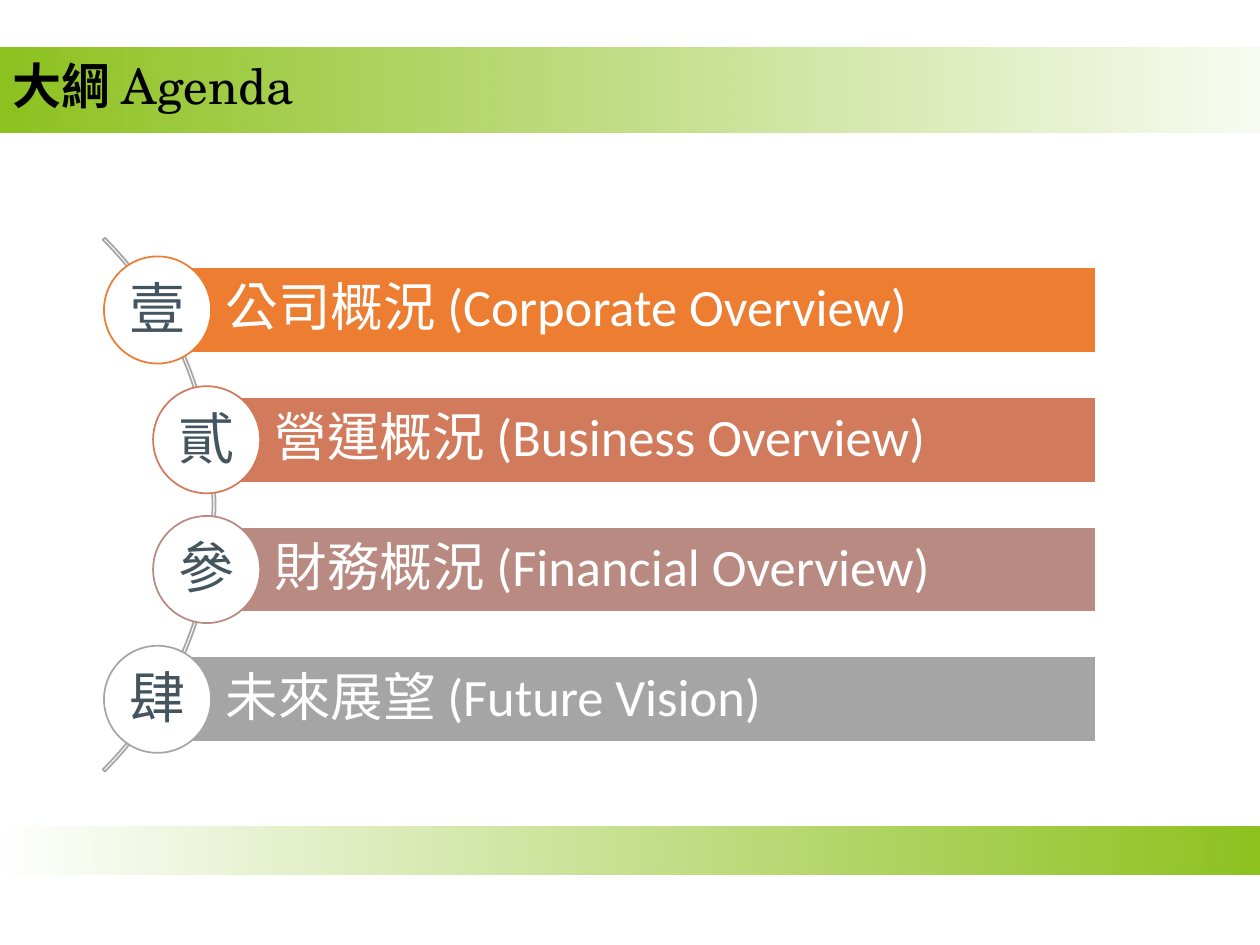
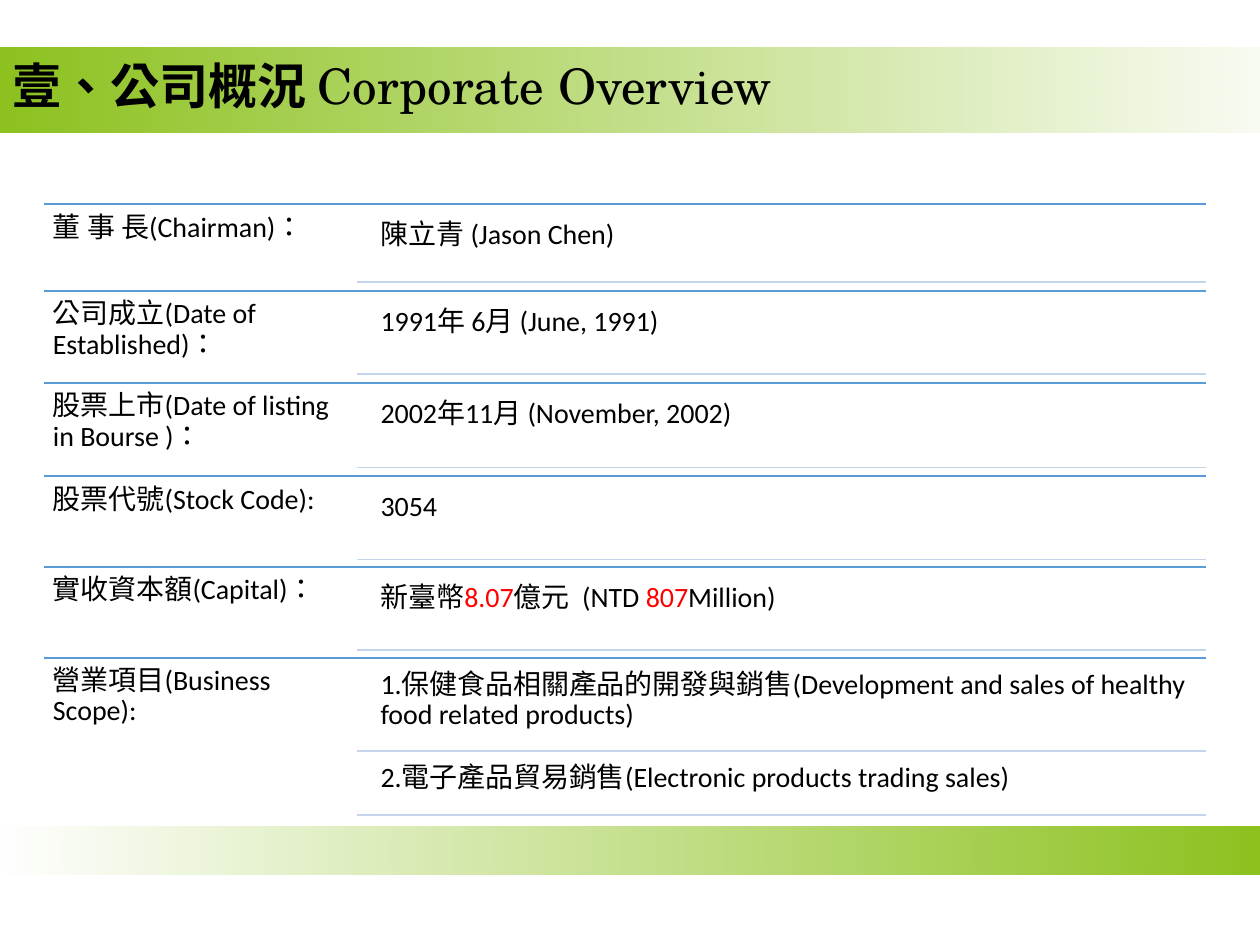
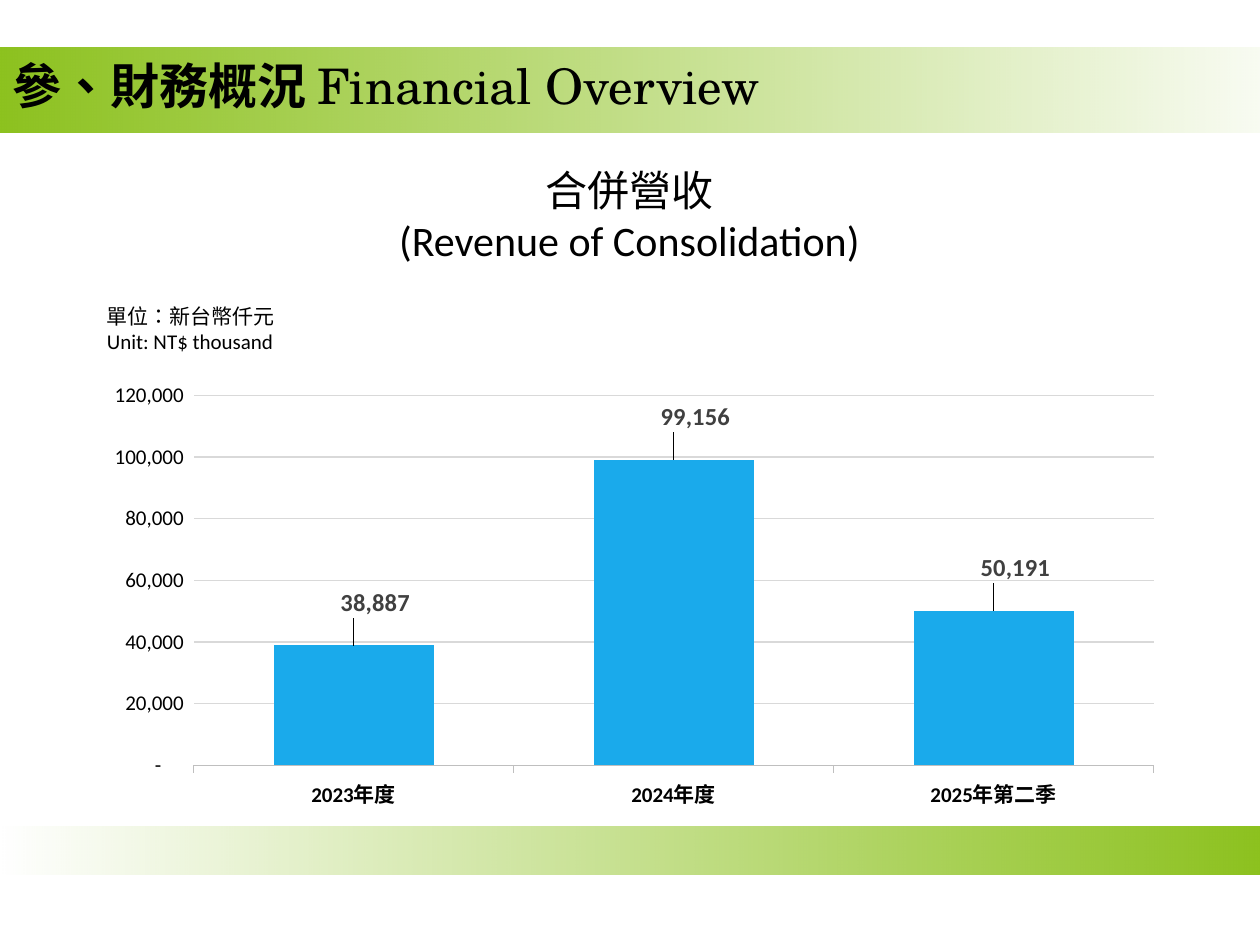
from lxml import etree
from pptx import Presentation
from pptx.chart.data import CategoryChartData
from pptx.dml.color import RGBColor
from pptx.enum.chart import XL_CHART_TYPE, XL_LABEL_POSITION, XL_TICK_MARK
from pptx.enum.shapes import MSO_CONNECTOR, MSO_SHAPE
from pptx.enum.text import MSO_ANCHOR, MSO_AUTO_SIZE, PP_ALIGN
from pptx.oxml.ns import qn
from pptx.util import Inches, Pt

LEFT, CENTER = PP_ALIGN.LEFT, PP_ALIGN.CENTER
TOP, MIDDLE = MSO_ANCHOR.TOP, MSO_ANCHOR.MIDDLE
LATIN, EAST_ASIAN, TITLE_FONT = "Calibri", "Noto Sans CJK SC", "TeX Gyre Schola"
LANGUAGE = "zh-TW"
BLACK, WHITE, RED, GREEN = "000000", "FFFFFF", "FF0000", "8DC21F"
ARC_GRAY, NUMERAL = "A5A5A5", "455560"
ROW_LINE, VALUE_LINE = "5B9BD5", "C4D5EB"
BAR_BLUE, AXIS_GRAY, GRID_GRAY, LABEL_GRAY = "1AAAEB", "BFBFBF", "D9D9D9", "404040"

# top, height, opacity in percent at the left and right ends
BANDS = [(6.56, 0.38, (0, 100)), (0.38, 0.67, (100, 6))]

# Chinese title, English title, width
TITLES = [
    ("大綱 ", "Agenda", 4.17),
    ("壹、公司概況 ", "Corporate Overview", 6.65),
    ("參、財務概況 ", "Financial Overview", 7.91),
]

# numeral, text, colour, left edge of the bar
AGENDA = [
    ("壹", "公司概況 (Corporate Overview)", "ED7D31", 1.25),
    ("貳", "營運概況 (Business Overview)", "D17B5C", 1.64),
    ("參", "財務概況 (Financial Overview)", "B98A82", 1.64),
    ("肆", "未來展望 (Future Vision)", "A5A5A5", 1.25),
]
AGENDA_TOP, AGENDA_PITCH, AGENDA_RIGHT = 2.12, 1.03, 8.7
BAR_HEIGHT, CIRCLE = 0.68, 0.85

# row top, label, values as (runs, y of the line below)
PROFILE = [
    (1.62, "董 事 長(Chairman)：", [([("陳立青 (Jason Chen)", BLACK)], 2.24)]),
    (2.31, "公司成立(Date of Established)：", [([("1991年 6月 (June, 1991)", BLACK)], 2.97)]),
    (3.04, "股票上市(Date of listing in Bourse )：",
     [([("2002年11月 (November, 2002)", BLACK)], 3.71)]),
    (3.78, "股票代號(Stock Code):", [([("3054", BLACK)], 4.44)]),
    (4.5, "實收資本額(Capital)：",
     [([("新臺幣", BLACK), ("8.07", RED), ("億元  (NTD ", BLACK), ("807", RED),
        ("Million)", BLACK)], 5.16)]),
    (5.22, "營業項目(Business Scope):",
     [([("1.保健食品相關產品的開發與銷售"
         "(Development and sales of healthy food related products)", BLACK)], 5.96),
      ([("2.電子產品貿易銷售(Electronic products trading sales)", BLACK)], 6.47)]),
]
PROFILE_LEFT, PROFILE_RIGHT, LABEL_WIDTH = 0.35, 9.57, 2.48
VALUE_LEFT, VALUE_INDENT, VALUE_GAP = 2.83, 0.12, 0.06

REVENUE_TITLE = ["合併營收", "(Revenue of Consolidation)"]
REVENUE_UNIT = ["單位：新台幣仟元", "Unit: NT$ thousand"]
REVENUE = {"2023年度": 38887, "2024年度": 99156, "2025年第二季": 50191}
NUMBER_FORMAT = '_-* #,##0_-;\\-* #,##0_-;_-* "-"??_-;_-@_'
PLOT_LAYOUT = {"layoutTarget": "inner", "xMode": "edge", "yMode": "edge",
               "x": 0.1, "y": 0.05, "w": 0.88, "h": 0.83}
LABEL_LAYOUT = {"x": 0.02, "y": -0.05}
NO_LEADER_LINES = (
    '<c:extLst xmlns:c="http://schemas.openxmlformats.org/drawingml/2006/chart">'
    '<c:ext uri="{CE6537A1-D6FC-4f65-9D91-7224C49458BB}"'
    ' xmlns:c15="http://schemas.microsoft.com/office/drawing/2012/chart">'
    '<c15:showLeaderLines val="0"/></c:ext></c:extLst>')


def rgb(color):
    return RGBColor.from_string(color)


def box(left, top, width, height):
    return [Inches(value) for value in (left, top, width, height)]


def set_font(font, size, color=BLACK, bold=False, name=LATIN):
    values = {"size": Pt(size), "bold": bold, "name": name}
    for attribute, value in values.items():
        setattr(font, attribute, value)
    font.color.rgb = rgb(color)


def set_frame(frame, insets=(0.1, 0.05, 0.1, 0.05), anchor=TOP):
    sides = ("margin_left", "margin_top", "margin_right", "margin_bottom")
    values = dict(zip(sides, map(Inches, insets)))
    values.update(word_wrap=True, auto_size=MSO_AUTO_SIZE.NONE, vertical_anchor=anchor)
    for attribute, value in values.items():
        setattr(frame, attribute, value)


def write(paragraph, runs, size, align=LEFT, spacing=0.9, name=LATIN):
    """Fill a paragraph with runs given as (text, colour) or (text, colour, bold)."""
    paragraph.alignment = align
    paragraph.line_spacing = spacing
    for text, color, *bold in runs:
        run = paragraph.add_run()
        run.text = text
        set_font(run.font, size, color, any(bold), name)
        properties = run._r.get_or_add_rPr()
        properties.set("lang", LANGUAGE)
        etree.SubElement(properties, qn("a:ea")).set("typeface", EAST_ASIAN)


def add_text(slide, place, paragraphs, size, align=LEFT, spacing=0.9, **frame_format):
    frame = slide.shapes.add_textbox(*box(*place)).text_frame
    set_frame(frame, **frame_format)
    for index, runs in enumerate(paragraphs):
        paragraph = frame.add_paragraph() if index else frame.paragraphs[0]
        write(paragraph, runs, size, align, spacing)


def add_shape(slide, kind, place, fill=None, line=None):
    shape = slide.shapes.add_shape(kind, *box(*place))
    shape.shadow.inherit = False
    if fill:
        shape.fill.solid()
        shape.fill.fore_color.rgb = rgb(fill)
    else:
        shape.fill.background()
    if line:
        shape.line.color.rgb = rgb(line)
        shape.line.width = Pt(1)
    else:
        shape.line.fill.background()
    return shape


def add_rule(slide, left, y, color):
    rule = slide.shapes.add_connector(
        MSO_CONNECTOR.STRAIGHT, *box(left, y, PROFILE_RIGHT, y))
    rule.line.color.rgb = rgb(color)
    rule.line.width = Pt(1)
    etree.SubElement(rule.element.spPr, qn("a:effectLst"))


def add_bands(slide):
    """Draw the gradient bands and move them to the layout that all slides share."""
    for index, (top, height, opacities) in enumerate(BANDS):
        band = add_shape(slide, MSO_SHAPE.RECTANGLE, (0, top, 10, height))
        band.fill.gradient()
        band.fill.gradient_angle = 0
        for stop in band.fill.gradient_stops:
            stop.color.rgb = rgb(GREEN)
        colors = band.element.spPr.iter(qn("a:srgbClr"))
        for color, opacity in zip(colors, opacities):
            etree.SubElement(color, qn("a:alpha")).set("val", str(opacity * 1000))
        band.element.nvSpPr.cNvPr.set("id", str(100 + index))
        slide.slide_layout.shapes.element.insert(2 + index, band.element)


def set_title(slide, chinese, english, width):
    title = slide.shapes.title
    title.left, title.top, title.width, title.height = box(0, 0.44, width, 0.53)
    set_frame(title.text_frame, anchor=MIDDLE)
    write(title.text_frame.paragraphs[0],
          [(chinese, BLACK, True), (english, BLACK)], 28, name=TITLE_FONT)


def build_agenda(slide):
    arc = add_shape(slide, MSO_SHAPE.BLOCK_ARC, (-4.28, 1.01, 5.99, 5.99), line=ARC_GRAY)
    for index, value in enumerate((189, 27, 0.004)):
        arc.adjustments[index] = value
    for index, (numeral, text, color, left) in enumerate(AGENDA):
        top = AGENDA_TOP + index * AGENDA_PITCH
        bar = add_shape(slide, MSO_SHAPE.RECTANGLE,
                        (left, top, AGENDA_RIGHT - left, BAR_HEIGHT), color, WHITE)
        set_frame(bar.text_frame, (0.54, 0.08, 0.08, 0.08), MIDDLE)
        write(bar.text_frame.paragraphs[0], [(text, WHITE)], 30)
        circle_top = top - (CIRCLE - BAR_HEIGHT) / 2
        circle = add_shape(slide, MSO_SHAPE.OVAL,
                           (left - CIRCLE / 2, circle_top, CIRCLE, CIRCLE), WHITE, color)
        set_frame(circle.text_frame, (0, 0, 0, 0.05), MIDDLE)
        write(circle.text_frame.paragraphs[0], [(numeral, NUMERAL)], 32,
              CENTER, 1.0, EAST_ASIAN)


def build_profile(slide):
    insets = (0.07,) * 4
    for top, label, values in PROFILE:
        add_rule(slide, PROFILE_LEFT, top, ROW_LINE)
        add_text(slide, (PROFILE_LEFT, top, LABEL_WIDTH, values[-1][1] - top),
                 [[(label, BLACK)]], 16, insets=insets)
        above = top
        for runs, below in values:
            value_top = above + VALUE_GAP / len(values)
            left = VALUE_LEFT + VALUE_INDENT
            add_text(slide, (left, value_top, PROFILE_RIGHT - left, below - value_top),
                     [runs], 16, insets=insets)
            add_rule(slide, VALUE_LEFT, below, VALUE_LINE)
            above = below


def insert_layout(parent, index, values):
    """Place a chart part by fractions of the chart size."""
    for old in parent.findall(qn("c:layout")):
        parent.remove(old)
    layout = etree.Element(qn("c:layout"))
    manual = etree.SubElement(layout, qn("c:manualLayout"))
    for tag, value in values.items():
        etree.SubElement(manual, qn(f"c:{tag}")).set("val", str(value))
    parent.insert(index, layout)


def build_revenue(slide):
    for place, lines, size, align in (
        ((2.3, 1.31, 5.39, 0.79), REVENUE_TITLE, 24, CENTER),
        ((0.75, 2.33, 1.65, 0.55), REVENUE_UNIT, 12, LEFT),
    ):
        add_text(slide, place, [[(line, BLACK)] for line in lines], size, align,
                 spacing=1.0, anchor=MIDDLE)

    data = CategoryChartData(number_format=NUMBER_FORMAT)
    data.categories = list(REVENUE)
    data.add_series("Series 1", list(REVENUE.values()))
    chart = slide.shapes.add_chart(
        XL_CHART_TYPE.COLUMN_CLUSTERED, *box(0.67, 2.96, 8.66, 3.54), data).chart
    chart.has_title = chart.has_legend = False
    set_font(chart.font, 12)
    insert_layout(chart.plots[0]._element.getparent(), 0, PLOT_LAYOUT)

    category_axis, value_axis = chart.category_axis, chart.value_axis
    set_font(category_axis.tick_labels.font, 12, bold=True)
    category_axis.major_tick_mark = XL_TICK_MARK.OUTSIDE
    category_axis.format.line.color.rgb = rgb(AXIS_GRAY)
    category_axis.format.line.width = Pt(0.75)
    set_font(value_axis.tick_labels.font, 12)
    value_axis.tick_labels.number_format = NUMBER_FORMAT
    value_axis.tick_labels.number_format_is_linked = False
    scale = {"minimum_scale": 0, "maximum_scale": 120000, "major_unit": 20000,
             "major_tick_mark": XL_TICK_MARK.NONE}
    for attribute, value in scale.items():
        setattr(value_axis, attribute, value)
    value_axis.format.line.fill.background()
    value_axis.major_gridlines.format.line.color.rgb = rgb(GRID_GRAY)
    value_axis.major_gridlines.format.line.width = Pt(0.75)

    plot = chart.plots[0]
    plot.gap_width = 100
    plot.vary_by_categories = False
    series = plot.series[0]
    series.format.fill.solid()
    series.format.fill.fore_color.rgb = rgb(BAR_BLUE)
    labels = series.data_labels
    labels.show_value = True
    labels.number_format = NUMBER_FORMAT
    labels.number_format_is_linked = False
    set_font(labels.font, 14, LABEL_GRAY, True)
    for index in range(len(REVENUE)):
        label = series.points[index].data_label
        set_font(label.font, 14, LABEL_GRAY, True)
        label.position = XL_LABEL_POSITION.OUTSIDE_END
    for label in labels._element.findall(qn("c:dLbl")):
        insert_layout(label, 1, LABEL_LAYOUT)
    labels._element.append(etree.fromstring(NO_LEADER_LINES))


def main():
    presentation = Presentation()
    presentation.slide_width, presentation.slide_height = Inches(10), Inches(7.5)
    title_only = presentation.slide_layouts[5]
    builders = (build_agenda, build_profile, build_revenue)
    for index, (title, build) in enumerate(zip(TITLES, builders)):
        slide = presentation.slides.add_slide(title_only)
        if index == 0:
            add_bands(slide)
        set_title(slide, *title)
        build(slide)
    presentation.save("out.pptx")


if __name__ == "__main__":
    main()
